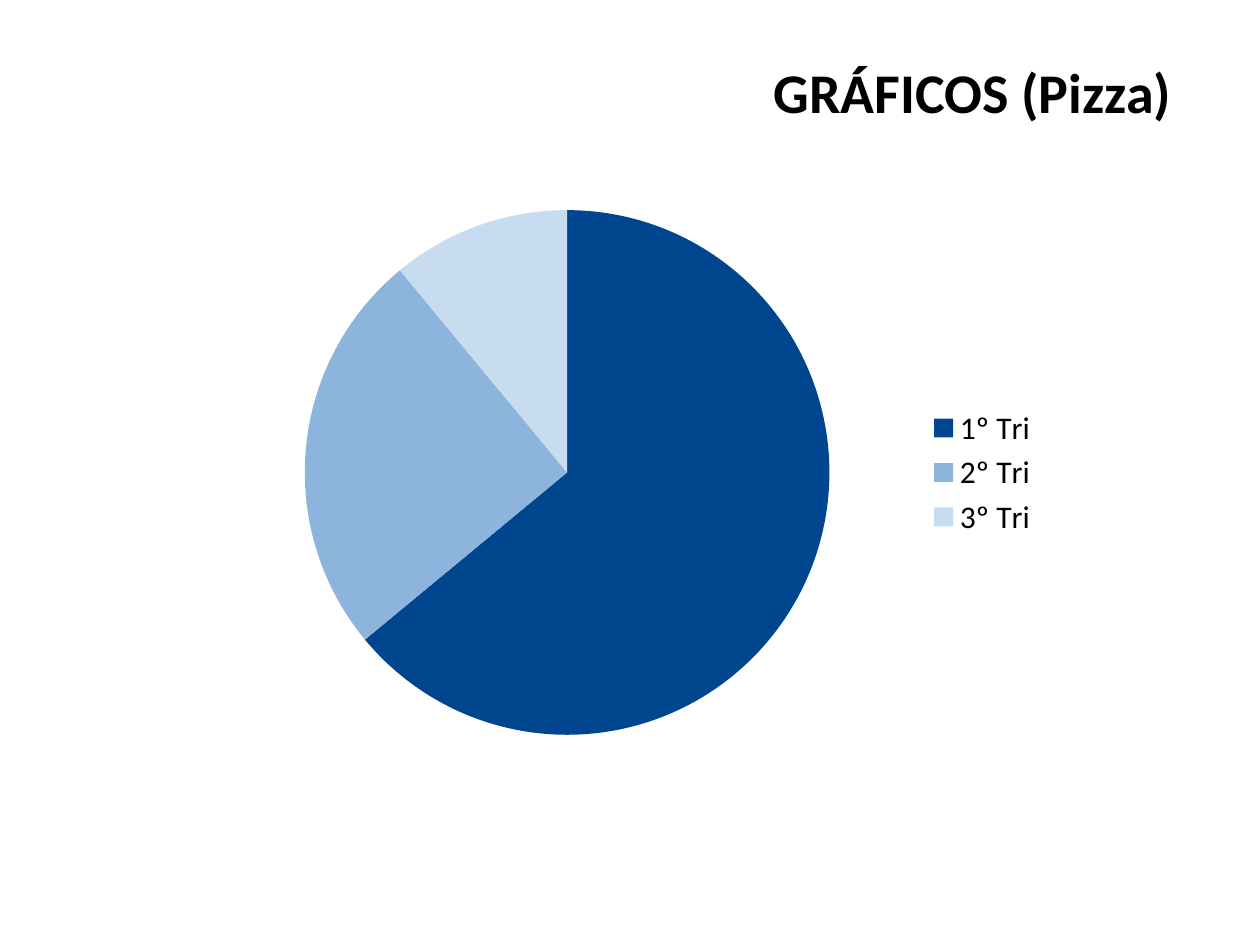
from pptx import Presentation
from pptx.chart.data import CategoryChartData
from pptx.dml.color import RGBColor
from pptx.enum.chart import XL_CHART_TYPE as ChartType, XL_LEGEND_POSITION as LegendPos
from pptx.enum.text import MSO_ANCHOR as Anchor, PP_ALIGN as Align
from pptx.util import Inches, Pt

BLACK = RGBColor(0x00, 0x00, 0x00)
NAVY = RGBColor(0x00, 0x46, 0x8E)
BLUE = RGBColor(0x8C, 0xB4, 0xDC)
PALE = RGBColor(0xC8, 0xDC, 0xF0)


class Deck:
    font = "Calibri"
    color = BLACK

    def __init__(self, prs):
        self.s = prs.slides.add_slide(prs.slide_layouts[6])

    def style(self, font, size, bold=False):
        font.name = self.font
        font.size = Pt(size)
        font.bold = bold
        font.color.rgb = self.color

    def title(self, text, x, y, w, h):
        sp = self.s.shapes.add_textbox(Inches(x), Inches(y), Inches(w), Inches(h))
        tf = sp.text_frame
        tf.word_wrap = True
        tf.vertical_anchor = Anchor.MIDDLE
        p = tf.paragraphs[0]
        p.text = text
        p.alignment = Align.RIGHT
        self.style(p.runs[0].font, 32, bold=True)

    def pie(self, name, slices, x, y, w, h):
        data = CategoryChartData()
        data.categories = [label for label, _, _ in slices]
        data.add_series(name, [value for _, value, _ in slices])
        chart = self.s.shapes.add_chart(
            ChartType.PIE, Inches(x), Inches(y), Inches(w), Inches(h), data
        ).chart
        self.style(chart.font, 18)
        chart.has_title = False
        chart.has_legend = True
        chart.legend.position = LegendPos.RIGHT
        chart.legend.include_in_layout = False
        plot = chart.plots[0]
        plot.vary_by_categories = True
        for i, (_, _, color) in enumerate(slices):
            fill = plot.series[0].points[i].format.fill
            fill.solid()
            fill.fore_color.rgb = color


def main():
    prs = Presentation()
    prs.slide_width = Inches(10)
    prs.slide_height = Inches(7.5)
    deck = Deck(prs)
    deck.title("GRÁFICOS (Pizza) ", 2.56, 0.3, 6.94, 0.85)
    quarters = [("1º Tri", 64, NAVY), ("2º Tri", 25, BLUE), ("3º Tri", 11, PALE)]
    deck.pie("Series 1", quarters, 1.67, 1.53, 6.67, 4.44)
    prs.save("out.pptx")


if __name__ == "__main__":
    main()
